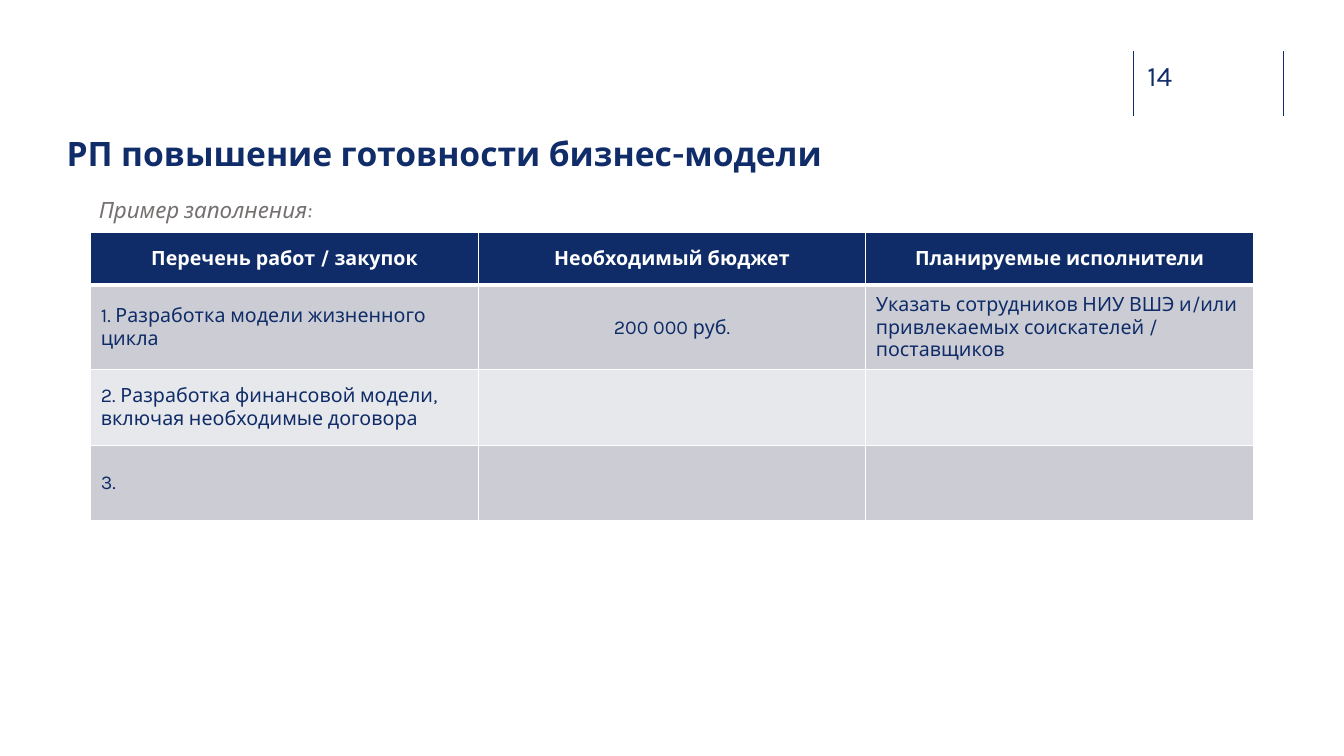
"""Builds the slide on raising business model readiness."""
from dataclasses import dataclass

from lxml import etree
from pptx import Presentation
from pptx.dml.color import RGBColor
from pptx.enum.shapes import MSO_CONNECTOR
from pptx.enum.text import MSO_ANCHOR, PP_ALIGN
from pptx.oxml.ns import qn
from pptx.util import Inches, Pt

STRAIGHT = MSO_CONNECTOR.STRAIGHT
TOP, MIDDLE = MSO_ANCHOR.TOP, MSO_ANCHOR.MIDDLE
LEFT, CENTER = PP_ALIGN.LEFT, PP_ALIGN.CENTER


@dataclass(frozen=True)
class Theme:
    font: str = "Karla"
    navy: str = "102D69"
    table_navy: str = "0F2C68"
    white: str = "FFFFFF"
    gray: str = "767171"
    band_dark: str = "CCCDD4"
    band_light: str = "E7E8EB"
    title_size: int = 24
    number_size: int = 20
    note_size: int = 16
    table_size: int = 14


THEME = Theme()


def write(frame, text, size, color, align=LEFT, anchor=TOP, inset=None, bold=False, italic=False):
    frame.word_wrap = True
    frame.vertical_anchor = anchor
    if inset is not None:
        frame.margin_left = frame.margin_right = Inches(inset)
        frame.margin_top = frame.margin_bottom = Inches(inset)
    para = frame.paragraphs[0]
    para.alignment = align
    span = para.add_run()
    span.text = text
    span.font.name = THEME.font
    span.font.size = Pt(size)
    span.font.bold = bold
    span.font.italic = italic
    span.font.color.rgb = RGBColor.from_string(color)


def set_borders(cell, bottom_width):
    properties = cell._tc.get_or_add_tcPr()
    widths = {"a:lnL": 1, "a:lnR": 1, "a:lnT": 1, "a:lnB": bottom_width}
    for position, (tag, width) in enumerate(widths.items()):
        border = etree.Element(qn(tag), w=str(Pt(width)))
        fill = etree.SubElement(border, qn("a:solidFill"))
        etree.SubElement(fill, qn("a:srgbClr"), val=THEME.white)
        properties.insert(position, border)


deck = Presentation()
deck.slide_width, deck.slide_height = Inches(13.33), Inches(7.5)
page = deck.slides.add_slide(deck.slide_layouts[5])

for x in (11.24, 12.73):
    rule = page.shapes.add_connector(STRAIGHT, Inches(x), Inches(0.51), Inches(x), Inches(1.15))
    rule.line.color.rgb = RGBColor.from_string(THEME.navy)
    rule.line.width = Pt(1)
    etree.SubElement(rule._element.spPr, qn("a:effectLst"))

number_box = page.shapes.add_textbox(Inches(11.38), Inches(0.58), Inches(0.73), Inches(0.34))
write(number_box.text_frame, "14", THEME.number_size, THEME.navy, inset=0)

title = page.shapes.title
title.left, title.top, title.width, title.height = Inches(0.56), Inches(1.27), Inches(11.08), Inches(0.5)
write(title.text_frame, "РП повышение готовности бизнес-модели", THEME.title_size, THEME.navy, bold=True)

rows = [
    ("Перечень работ / закупок", "Необходимый бюджет", "Планируемые исполнители"),
    (
        "1. Разработка модели жизненного цикла",
        "200 000 руб.",
        "Указать сотрудников НИУ ВШЭ и/или привлекаемых соискателей / поставщиков",
    ),
    ("2. Разработка финансовой модели, включая необходимые договора", "", ""),
    ("3.", "", ""),
]
row_heights = (0.52, 0.84, 0.75, 0.75)
row_fills = (THEME.table_navy, THEME.band_dark, THEME.band_light, THEME.band_dark)

table = page.shapes.add_table(
    len(rows), 3, Inches(0.9), Inches(2.31), Inches(11.53), Inches(sum(row_heights))
).table
for column in table.columns:
    column.width = Inches(11.53 / 3)
for row_index, texts in enumerate(rows):
    table.rows[row_index].height = Inches(row_heights[row_index])
    header = row_index == 0
    for column_index, text in enumerate(texts):
        cell = table.cell(row_index, column_index)
        cell.fill.solid()
        cell.fill.fore_color.rgb = RGBColor.from_string(row_fills[row_index])
        set_borders(cell, 3 if header else 1)
        cell.vertical_anchor = MIDDLE
        if text:
            write(
                cell.text_frame, text, THEME.table_size,
                THEME.white if header else THEME.table_navy,
                align=CENTER if header or column_index == 1 else LEFT,
                anchor=MIDDLE, bold=header,
            )

note_box = page.shapes.add_textbox(Inches(0.9), Inches(1.86), Inches(11.51), Inches(0.43))
write(
    note_box.text_frame, "Пример заполнения:", THEME.note_size, THEME.gray,
    anchor=MIDDLE, inset=0.08, italic=True,
)

deck.save("out.pptx")
